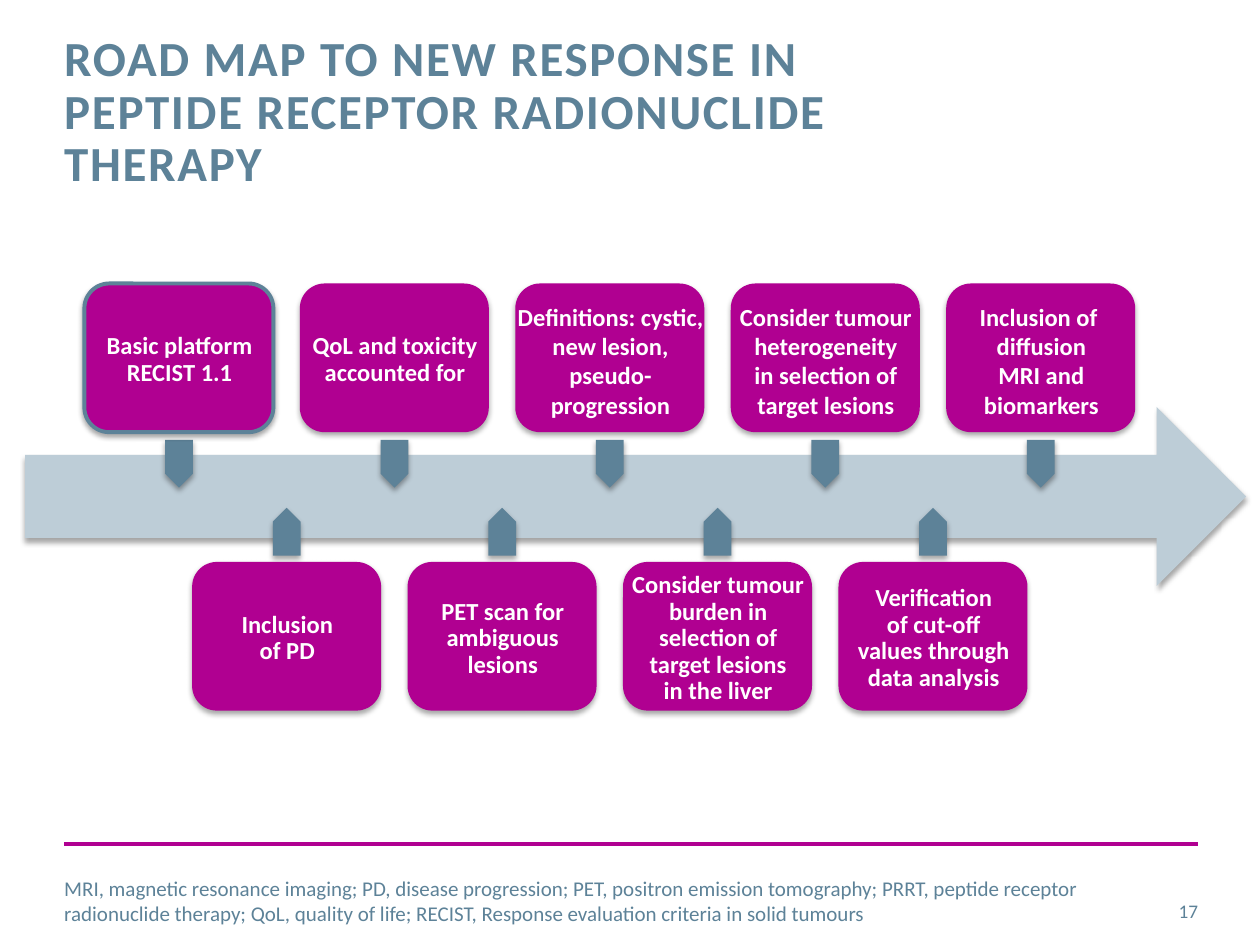
from lxml import etree
from pptx import Presentation
from pptx.dml.color import RGBColor
from pptx.enum.shapes import MSO_CONNECTOR as Connector, MSO_SHAPE as Shape
from pptx.enum.text import MSO_ANCHOR as Anchor, MSO_AUTO_SIZE as AutoSize, PP_ALIGN as Align
from pptx.oxml import parse_xml
from pptx.oxml.ns import nsdecls, qn
from pptx.util import Inches, Pt

# Content
TITLE = "ROAD MAP TO NEW RESPONSE IN PEPTIDE RECEPTOR RADIONUCLIDE THERAPY"
FOOTNOTE = (
    "MRI, magnetic resonance imaging; PD, disease progression; PET, positron emission "
    "tomography; PRRT, peptide receptor radionuclide therapy; QoL, quality of life; "
    "RECIST, Response evaluation criteria in solid tumours"
)
PAGE_NUMBER = "17"
# Steps alternate above and below the arrow: text, drawn lines, line spacing
STEPS = [
    ("Basic platform\nRECIST 1.1", 2, 0.9),
    ("Inclusion\nof PD", 2, 0.9),
    ("QoL and toxicity\naccounted for", 2, 0.9),
    ("PET scan for\nambiguous\nlesions", 3, 0.9),
    ("Definitions: cystic, new lesion, pseudo-\nprogression", 4, 1.0),
    ("Consider tumour\nburden in\nselection of\ntarget lesions\nin the liver", 5, 0.9),
    ("Consider tumour\nheterogeneity\nin selection of\ntarget lesions", 4, 1.0),
    ("Verification\nof cut-off\nvalues through\ndata analysis", 4, 0.9),
    ("Inclusion of \ndiffusion\nMRI and\nbiomarkers", 4, 1.0),
]

# Style and grid, in inches
COLORS = {"slate": "5D8298", "magenta": "B00091", "pale": "BDCDD7", "white": "FFFFFF"}
FONT = "Calibri"
MARGIN, RIGHT = 0.51, 9.51
CARD_W, CARD_H = 1.5, 1.18
FIRST_LEFT, STEP_PITCH = 0.67, 0.855
POINTER_W, POINTER_H = 0.38, 0.22
LINE_H, TEXT_PAD = 0.234, 0.05
# Card top, pointer centre, pointer rotation
ROWS = [(2.25, 3.68, 90), (4.46, 4.22, 270)]


def color(name):
    return RGBColor.from_string(COLORS[name])


def add_shadow(shape):
    shape._element.spPr.append(parse_xml(
        f'<a:effectLst {nsdecls("a")}><a:outerShdw blurRad="{Pt(3.1)}" dist="{Pt(1.8)}" '
        'dir="5400000" rotWithShape="0"><a:srgbClr val="000000"><a:alpha val="35000"/>'
        '</a:srgbClr></a:outerShdw></a:effectLst>'))


def add_block(shapes, kind, left, top, width, height, fill):
    block = shapes.add_shape(kind, Inches(left), Inches(top), Inches(width), Inches(height))
    block.fill.solid()
    block.fill.fore_color.rgb = color(fill)
    block.line.fill.background()
    add_shadow(block)
    return block


def write(box, text, size, ink, align=Align.LEFT, anchor=Anchor.MIDDLE, bold=False, pad=0):
    frame = box.text_frame
    frame.word_wrap = True
    frame.vertical_anchor = anchor
    frame.margin_left = frame.margin_right = 0
    frame.margin_top = frame.margin_bottom = Inches(pad)
    para = frame.paragraphs[0]
    para.text = text
    para.alignment = align
    for run in para.runs:
        run.font.name, run.font.size, run.font.bold = FONT, Pt(size), bold
        run.font.color.rgb = color(ink)
    return para


def add_text(shapes, left, top, width, height, *args, **style):
    box = shapes.add_textbox(Inches(left), Inches(top), Inches(width), Inches(height))
    return box, write(box, *args, **style)


def add_step(page, index, text, lines, spacing):
    card_top, pointer_y, rotation = ROWS[index % 2]
    left = FIRST_LEFT + index * STEP_PITCH
    center = left + CARD_W / 2
    shapes = page.shapes.add_group_shape().shapes

    pointer = add_block(shapes, Shape.PENTAGON, center - POINTER_W / 2,
                        pointer_y - POINTER_H / 2, POINTER_W, POINTER_H, "slate")
    pointer.rotation = rotation

    card = add_block(shapes, Shape.ROUNDED_RECTANGLE, left, card_top, CARD_W, CARD_H, "magenta")
    if index == 0:
        card.line.color.rgb = color("slate")
        card.line.width = Pt(2.25)

    height = lines * LINE_H * spacing + 2 * TEXT_PAD
    top = card_top + (CARD_H - height) / 2 + 0.02
    box, para = add_text(shapes, left, top, CARD_W + 0.01, height, text, 14, "white",
                         align=Align.CENTER, bold=True, pad=TEXT_PAD)
    box.text_frame.auto_size = AutoSize.SHAPE_TO_FIT_TEXT
    para.line_spacing = spacing


def main():
    deck = Presentation()
    deck.slide_width, deck.slide_height = Inches(10), Inches(7.5)
    page = deck.slides.add_slide(deck.slide_layouts[5])

    # Title
    title = page.shapes.title
    title.left, title.top = Inches(MARGIN), Inches(0.27)
    title.width, title.height = Inches(7.17), Inches(0.88)
    para = write(title, TITLE, 28, "slate", anchor=Anchor.TOP, bold=True)
    title.text_frame.auto_size = AutoSize.NONE
    para.line_spacing = Pt(30)
    para.runs[0]._r.get_or_add_rPr().set("spc", "100")

    # Footer rule, footnote and page number
    rule = page.shapes.add_connector(Connector.STRAIGHT, Inches(MARGIN), Inches(6.7),
                                     Inches(RIGHT), Inches(6.7))
    rule.line.color.rgb = color("magenta")
    rule.line.width = Pt(2)
    etree.SubElement(rule._element.spPr, qn("a:effectLst"))
    add_text(page.shapes, MARGIN, 6.95, 8.59, 0.4, FOOTNOTE, 12, "slate")
    add_text(page.shapes, RIGHT - 0.64, 7.03, 0.64, 0.4, PAGE_NUMBER, 11, "slate",
             align=Align.RIGHT)

    # Timeline arrow and its steps
    arrow = add_block(page.shapes, Shape.RIGHT_ARROW, 0.2, 3.23, 9.69, 1.42, "pale")
    arrow.adjustments[0], arrow.adjustments[1] = 0.464, 0.5
    for index, step in enumerate(STEPS):
        add_step(page, index, *step)

    deck.save("out.pptx")


if __name__ == "__main__":
    main()
